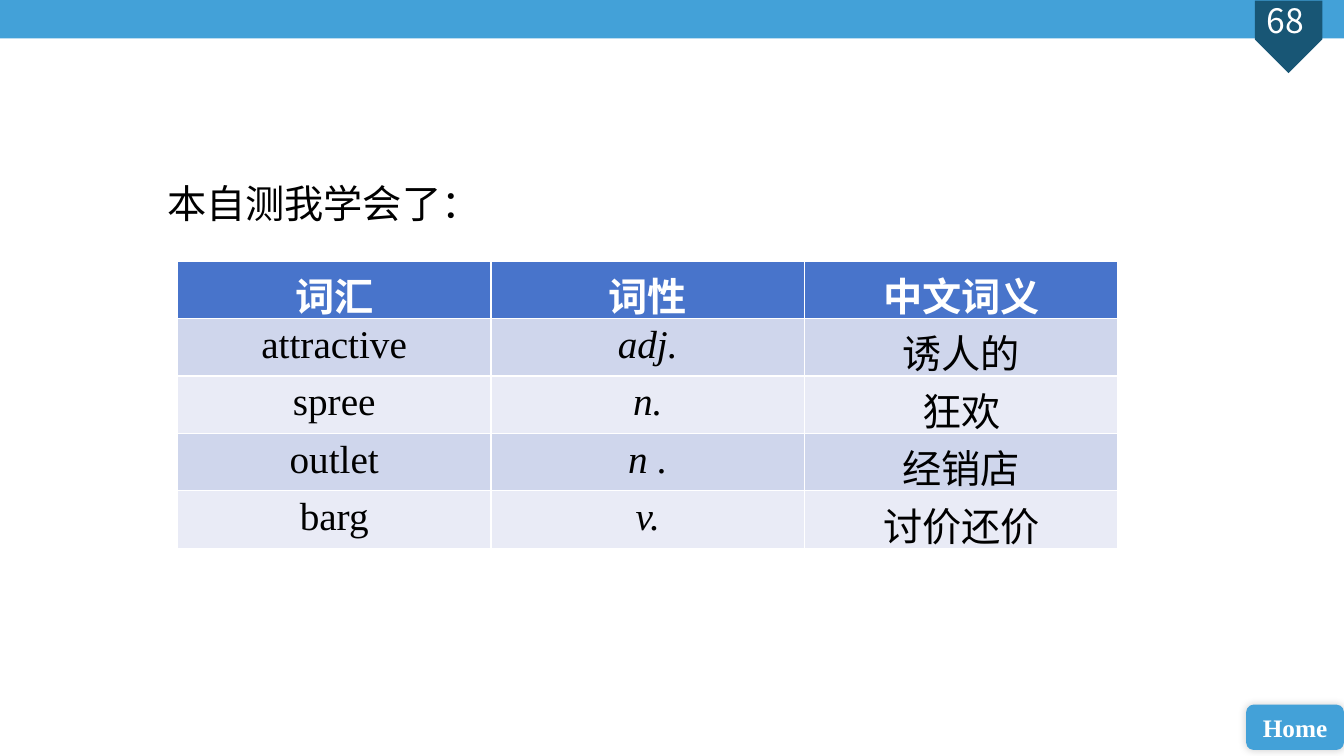
from lxml import etree
from pptx import Presentation
from pptx.dml.color import RGBColor
from pptx.enum.shapes import MSO_SHAPE
from pptx.enum.text import MSO_ANCHOR, PP_ALIGN
from pptx.oxml import parse_xml
from pptx.util import Inches, Pt

CENTER, LEFT = PP_ALIGN.CENTER, PP_ALIGN.LEFT
MIDDLE = MSO_ANCHOR.MIDDLE
RECT, ROUND, PENTAGON = MSO_SHAPE.RECTANGLE, MSO_SHAPE.ROUNDED_RECTANGLE, MSO_SHAPE.PENTAGON
A = "http://schemas.openxmlformats.org/drawingml/2006/main"
SERIF, SANS, CJK = "Times New Roman", "Calibri", "Noto Sans CJK SC"
BLUE, NAVY, WHITE, BLACK = "43A1D8", "185675", "FFFFFF", "000000"
HEADER, BANDS = "4874CB", ("CFD6EC", "E9EBF6")
WIDTH, HEIGHT = 13.33, 7.5
ROW = 0.57

WORDS = [
    ("词汇", "词性", "中文词义"),
    ("attractive", "adj.", "诱人的"),
    ("spree", "n.", "狂欢"),
    ("outlet", "n .", "经销店"),
    ("barg", "v.", "讨价还价"),
]


def rgb(value):
    return RGBColor.from_string(value)


def box(at):
    return [Inches(v) for v in at]


def write(tf, text, size, font, color, align=CENTER, bold=False, italic=False):
    p = tf.paragraphs[0]
    p.text = text
    p.alignment = align
    f = p.font
    f.size, f.name, f.bold, f.italic = Pt(size), font, bold, italic
    f.color.rgb = rgb(color)


def add_block(s, kind, at, fill):
    sp = s.shapes.add_shape(kind, *box(at))
    sp.shadow.inherit = False
    sp.fill.solid()
    sp.fill.fore_color.rgb = rgb(fill)
    sp.line.fill.background()
    return sp


def add_text(s, at, *text, **style):
    tf = s.shapes.add_textbox(*box(at)).text_frame
    tf.word_wrap = True
    tf.margin_top = tf.margin_bottom = 0
    write(tf, *text, **style)


def add_glow_shadow(sp):
    """Soft black shadow spread evenly around the shape."""
    effects = sp._element.spPr.find(f"{{{A}}}effectLst")
    effects.append(parse_xml(
        f'<a:outerShdw xmlns:a="{A}" blurRad="{Pt(6)}" dist="0" dir="18900000">'
        '<a:srgbClr val="000000"/></a:outerShdw>'))
    etree.SubElement(effects[0][0], f"{{{A}}}alpha", val="20000")


def add_home_button(s):
    sp = add_block(s, ROUND, (WIDTH - 0.97, 6.99, 0.97, 0.45), BLUE)
    add_glow_shadow(sp)
    tf = sp.text_frame
    tf.vertical_anchor = MIDDLE
    tf.margin_left = tf.margin_right = 0
    write(tf, "Home", 18, SERIF, WHITE, bold=True)


def add_word_table(s, rows):
    at = (1.76, 2.59, 9.33, ROW * len(rows))
    table = s.shapes.add_table(len(rows), len(rows[0]), *box(at)).table
    for i, row in enumerate(rows):
        head = i == 0
        for j, word in enumerate(row):
            cell = table.cell(i, j)
            cell.fill.solid()
            cell.fill.fore_color.rgb = rgb(HEADER if head else BANDS[(i - 1) % 2])
            write(cell.text_frame, word, 28, SERIF, WHITE if head else BLACK,
                  bold=head, italic=not head and j == 1)


def main():
    prs = Presentation()
    prs.slide_width, prs.slide_height = Inches(WIDTH), Inches(HEIGHT)
    s = prs.slides.add_slide(prs.slide_layouts[6])
    add_block(s, RECT, (0, 0, WIDTH, 0.38), BLUE)
    add_block(s, PENTAGON, (12.42, 0.03, 0.72, 0.67), NAVY).rotation = 90
    add_text(s, (12.26, 0, 0.98, 0.5), "68", 24, CJK, WHITE)
    add_home_button(s)
    add_word_table(s, WORDS)
    add_text(s, (1.56, 1.78, 3.87, 0.57), "本自测我学会了：", 28, SANS, BLACK, align=LEFT)
    prs.save("out.pptx")


if __name__ == "__main__":
    main()
